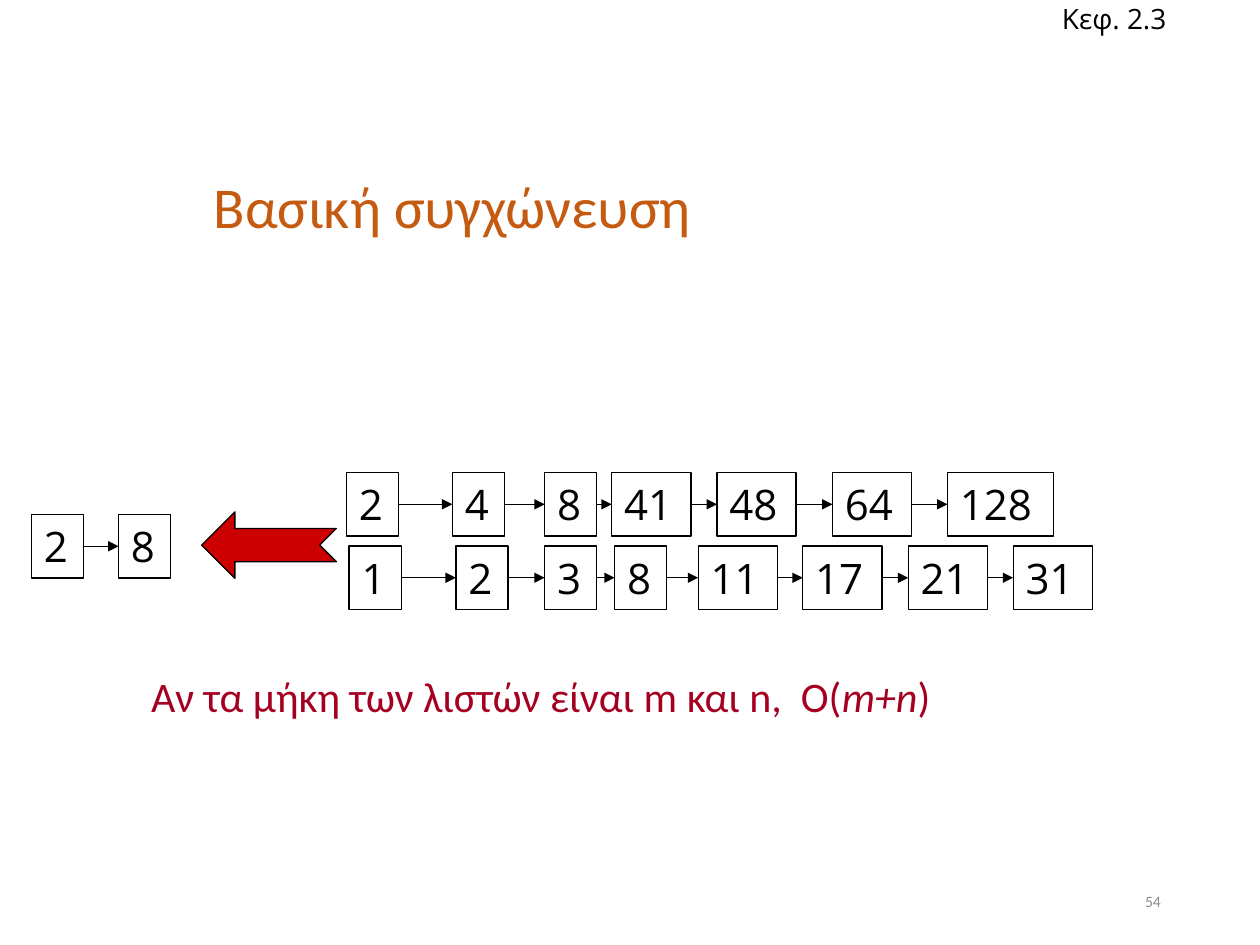
from lxml.etree import SubElement
from pptx import Presentation
from pptx.dml.color import RGBColor
from pptx.enum.shapes import MSO_CONNECTOR, MSO_SHAPE
from pptx.enum.text import MSO_ANCHOR, MSO_AUTO_SIZE as AutoSize, PP_ALIGN
from pptx.oxml.ns import qn
from pptx.util import Pt


def color(hex_code):
    return RGBColor.from_string(hex_code)


def style_text(box, size, font, hex_code, align=PP_ALIGN.LEFT, anchor=MSO_ANCHOR.TOP):
    frame = box.text_frame
    frame.vertical_anchor = anchor
    para = frame.paragraphs[0]
    para.alignment = align
    for span in para.runs:
        span.font.size = Pt(size)
        span.font.name = font
        span.font.color.rgb = color(hex_code)


deck = Presentation()
deck.slide_width, deck.slide_height = Pt(720), Pt(540)
page = deck.slides.add_slide(deck.slide_layouts[5])
shapes = page.shapes

title = shapes.title
title.left, title.top, title.width, title.height = Pt(115), Pt(67.5), Pt(621), Pt(104.4)
title.text_frame.text = "Βασική συγχώνευση"
title.text_frame.auto_size = AutoSize.NONE
title.text_frame.paragraphs[0].line_spacing = 0.9
style_text(title, 33, "Calibri", "C55A11", anchor=MSO_ANCHOR.MIDDLE)

number = shapes.add_textbox(Pt(508.5), Pt(500.5), Pt(162), Pt(28.75))
number.text_frame.text = "54"
style_text(number, 9, "Calibri", "8C8C8C", PP_ALIGN.RIGHT, MSO_ANCHOR.MIDDLE)

node_height = 36.35
linked_lists = [
    (270, [("2", 198), ("4", 258.5), ("8", 311.25), ("41", 349.6),
           ("48", 409.7), ("64", 475.7), ("128", 541.5)]),
    (312, [("1", 199.5), ("2", 260.5), ("3", 311.25), ("8", 351.25), ("11", 399),
           ("17", 458.75), ("21", 519), ("31", 579)]),
    (294, [("2", 18), ("8", 67.75)]),
]
for top, nodes in linked_lists:
    middle = top + node_height / 2
    previous_right = None
    for value, left in nodes:
        width = 14.4 + 15.4 * len(value)
        node = shapes.add_shape(MSO_SHAPE.RECTANGLE, Pt(left), Pt(top), Pt(width), Pt(node_height))
        node.shadow.inherit = False
        node.fill.background()
        node.line.color.rgb = color("000000")
        node.line.width = Pt(0.75)
        node.text_frame.text = value
        node.text_frame.word_wrap = False
        node.text_frame.auto_size = AutoSize.SHAPE_TO_FIT_TEXT
        style_text(node, 24, "Open Sans", "000000")
        if previous_right is not None:
            link = shapes.add_connector(MSO_CONNECTOR.STRAIGHT, Pt(previous_right), Pt(middle),
                                        Pt(left), Pt(middle))
            link.line.color.rgb = color("000000")
            link.line.width = Pt(0.75)
            SubElement(link.line._get_or_add_ln(), qn("a:tailEnd"), type="triangle")
            SubElement(link._element.spPr, qn("a:effectLst"))
        previous_right = left + width

merge_arrow = shapes.add_shape(MSO_SHAPE.NOTCHED_RIGHT_ARROW, Pt(115.2), Pt(292.5), Pt(77), Pt(38))
merge_arrow.rotation = 180
merge_arrow.shadow.inherit = False
merge_arrow.fill.solid()
merge_arrow.fill.fore_color.rgb = color("CC0000")
merge_arrow.line.color.rgb = color("000000")
merge_arrow.line.width = Pt(0.75)

cost = shapes.add_textbox(Pt(79.25), Pt(379.5), Pt(463.7), Pt(36.35))
cost.text_frame.word_wrap = False
cost.text_frame.auto_size = AutoSize.SHAPE_TO_FIT_TEXT
for text, italic in [("Αν τα μήκη των λιστών είναι m και n,  O(", False), ("m+n", True), (")", False)]:
    span = cost.text_frame.paragraphs[0].add_run()
    span.text = text
    span.font.italic = italic
style_text(cost, 24, "Calibri", "A50021")

chapter = shapes.add_textbox(Pt(599.75), Pt(-2.9), Pt(79.2), Pt(26.65))
chapter.text_frame.text = "Κεφ. 2.3"
chapter.text_frame.word_wrap = False
chapter.text_frame.auto_size = AutoSize.SHAPE_TO_FIT_TEXT
style_text(chapter, 16, "Open Sans", "000000", anchor=MSO_ANCHOR.MIDDLE)

deck.save("out.pptx")
